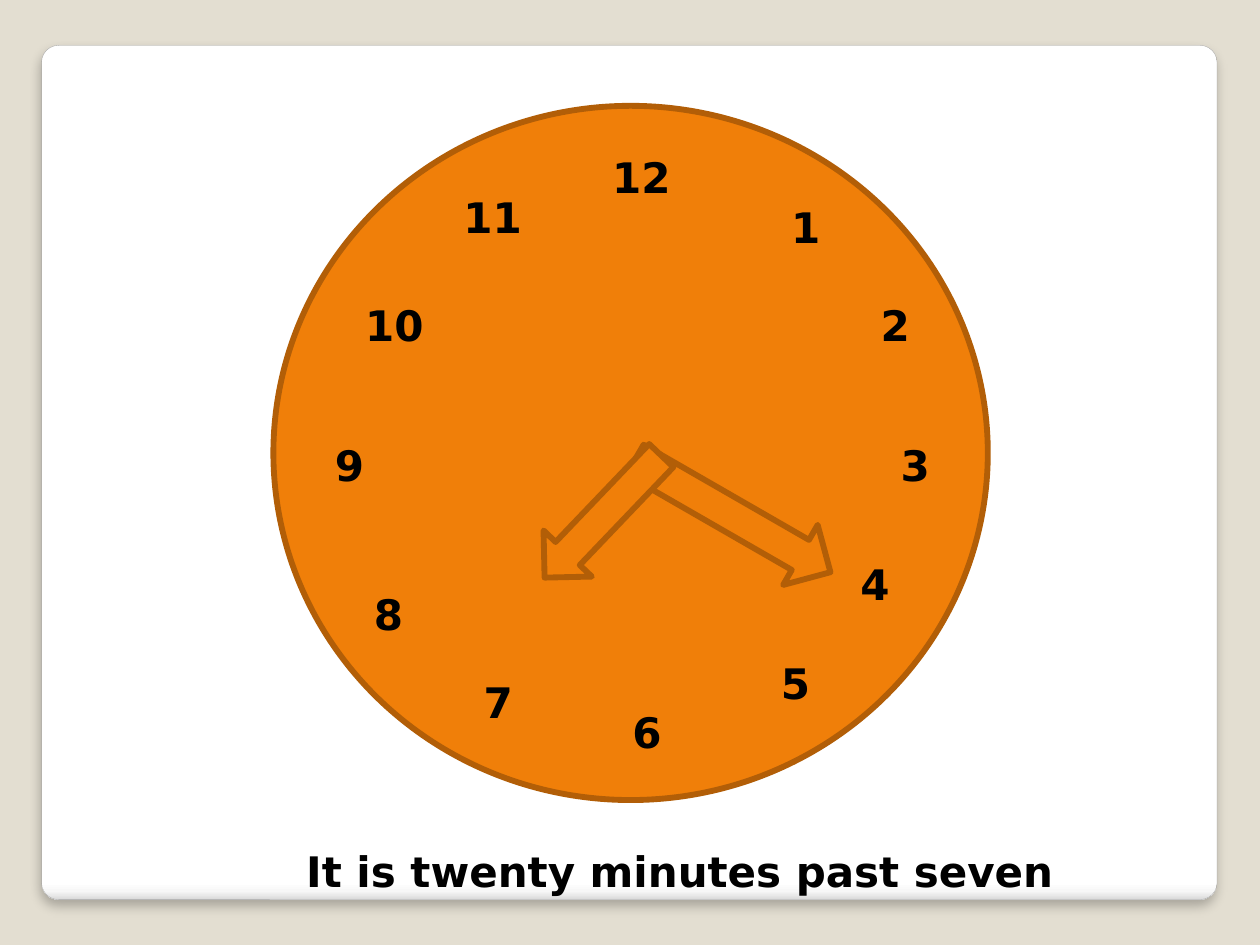
import dataclasses

import lxml.etree
import pptx
import pptx.dml.color
import pptx.enum.shapes
import pptx.enum.text
import pptx.oxml
import pptx.oxml.ns
import pptx.util

RGBColor = pptx.dml.color.RGBColor
Preset = pptx.enum.shapes.MSO_SHAPE

BACKGROUND = RGBColor(0xE3, 0xDE, 0xD1)
PANEL_LINE = RGBColor(0xA4, 0xA4, 0xA4)
ORANGE = RGBColor(0xF0, 0x7F, 0x09)
BROWN = RGBColor(0xB2, 0x5E, 0x07)
BLACK = RGBColor(0x00, 0x00, 0x00)
WHITE = RGBColor(0xFF, 0xFF, 0xFF)
PANEL_STOPS = [(0, WHITE), (98, WHITE), (99, RGBColor(0xF7, 0xF7, 0xF7)),
               (100, RGBColor(0xDA, 0xDA, 0xDA))]

FONT = "DejaVu Sans"
FONT_SIZE = 24

# The slide is a grid of 100 columns by 75 rows
COLUMNS, ROWS = 100, 75
CELL = pptx.util.Inches(0.1)
TEXT_ROWS = 5


@dataclasses.dataclass(frozen=True)
class Box:
    column: float
    row: float
    columns: float
    rows: float

    def lengths(self) -> list[int]:
        return [round(cells * CELL) for cells in dataclasses.astuple(self)]


@dataclasses.dataclass(frozen=True)
class Numeral:
    text: str
    column: float
    row: float
    columns: float


@dataclasses.dataclass(frozen=True)
class Hand:
    preset: Preset
    box: Box
    rotation: float


PANEL = Box(3.3, 3.6, 93.3, 67.8)
DIAL = Box(21.7, 8.4, 56.7, 55.1)
CAPTION = Box(18.5, 66.6, 70.9, TEXT_ROWS)
NUMERALS = [
    Numeral("12", 47.6, 11.5, 7.1),
    Numeral("1", 61.8, 15.5, 5.5),
    Numeral("2", 68.9, 23.3, 5.5),
    Numeral("3", 70.5, 34.4, 6.3),
    Numeral("4", 67.3, 43.8, 7.9),
    Numeral("5", 61, 51.7, 6.3),
    Numeral("6", 49.2, 55.6, 7.1),
    Numeral("7", 37.4, 53.2, 6.3),
    Numeral("8", 28.7, 46.2, 6.3),
    Numeral("9", 25.6, 34.4, 4.7),
    Numeral("10", 28, 23.3, 7.9),
    Numeral("11", 35.8, 14.7, 7.9),
]
MINUTE_HAND = Hand(Preset.RIGHT_ARROW, Box(49.2, 38.2, 17.9, 5.5), 29.9)
HOUR_HAND = Hand(Preset.UP_ARROW, Box(45.2, 34.3, 5.3, 13.4), 223.7)


def add_panel(slide) -> None:
    shape = slide.shapes.add_shape(Preset.ROUNDED_RECTANGLE, *PANEL.lengths())
    shape.adjustments[0] = 0.02
    shape.line.color.rgb = PANEL_LINE
    shape.line.width = pptx.util.Pt(0.16)

    # Gradient with four stops, running downwards
    shape.fill.gradient()
    shape.fill.gradient_angle = 270
    properties = shape._element.spPr
    qn = pptx.oxml.ns.qn
    stops = properties.find(".//" + qn("a:gsLst"))
    for stop in list(stops):
        stops.remove(stop)
    for percent, color in PANEL_STOPS:
        stop = lxml.etree.SubElement(stops, qn("a:gs"), pos=str(percent * 1000))
        lxml.etree.SubElement(stop, qn("a:srgbClr"), val=str(color))

    # Soft shadow below the panel
    properties.append(pptx.oxml.parse_xml(
        f'<a:effectLst {pptx.oxml.ns.nsdecls("a")}>'
        f'<a:outerShdw blurRad="{pptx.util.Pt(6)}" dist="{pptx.util.Pt(4)}" '
        'dir="5400000" algn="tl" rotWithShape="0">'
        '<a:srgbClr val="000000"><a:alpha val="25000"/></a:srgbClr>'
        '</a:outerShdw></a:effectLst>'))


def add_clock_part(slide, preset: Preset, box: Box, rotation: float = 0) -> None:
    shape = slide.shapes.add_shape(preset, *box.lengths())
    shape.rotation = rotation
    shape.shadow.inherit = False
    shape.fill.solid()
    shape.fill.fore_color.rgb = ORANGE
    shape.line.color.rgb = BROWN
    shape.line.width = pptx.util.Pt(3.35)


def write_text(shape, text: str, alignment: pptx.enum.text.PP_ALIGN) -> None:
    text_frame = shape.text_frame
    text_frame.text = text
    text_frame.word_wrap = True
    text_frame.auto_size = pptx.enum.text.MSO_AUTO_SIZE.SHAPE_TO_FIT_TEXT
    text_frame.vertical_anchor = pptx.enum.text.MSO_ANCHOR.TOP
    paragraph = text_frame.paragraphs[0]
    paragraph.alignment = alignment
    font = paragraph.runs[0].font
    font.name = FONT
    font.size = pptx.util.Pt(FONT_SIZE)
    font.bold = True
    font.color.rgb = BLACK


def add_numeral(slide, numeral: Numeral) -> None:
    box = Box(numeral.column, numeral.row, numeral.columns, TEXT_ROWS)
    shape = slide.shapes.add_textbox(*box.lengths())
    write_text(shape, numeral.text, pptx.enum.text.PP_ALIGN.LEFT)


def add_caption(slide, text: str) -> None:
    title = slide.shapes.title
    title.left, title.top, title.width, title.height = CAPTION.lengths()
    write_text(title, text, pptx.enum.text.PP_ALIGN.CENTER)
    # Bring the caption in front of the panel
    slide.shapes._spTree.append(title._element)


def main() -> None:
    presentation = pptx.Presentation()
    presentation.slide_width = COLUMNS * CELL
    presentation.slide_height = ROWS * CELL
    slide = presentation.slides.add_slide(
        presentation.slide_layouts.get_by_name("Title Only"))
    slide.background.fill.solid()
    slide.background.fill.fore_color.rgb = BACKGROUND

    # Panel and clock face
    add_panel(slide)
    add_clock_part(slide, Preset.OVAL, DIAL)
    for numeral in NUMERALS:
        add_numeral(slide, numeral)

    # Hands, the hour hand on top
    for hand in (MINUTE_HAND, HOUR_HAND):
        add_clock_part(slide, hand.preset, hand.box, hand.rotation)

    add_caption(slide, "It is twenty minutes past seven")
    presentation.save("out.pptx")


if __name__ == "__main__":
    main()
